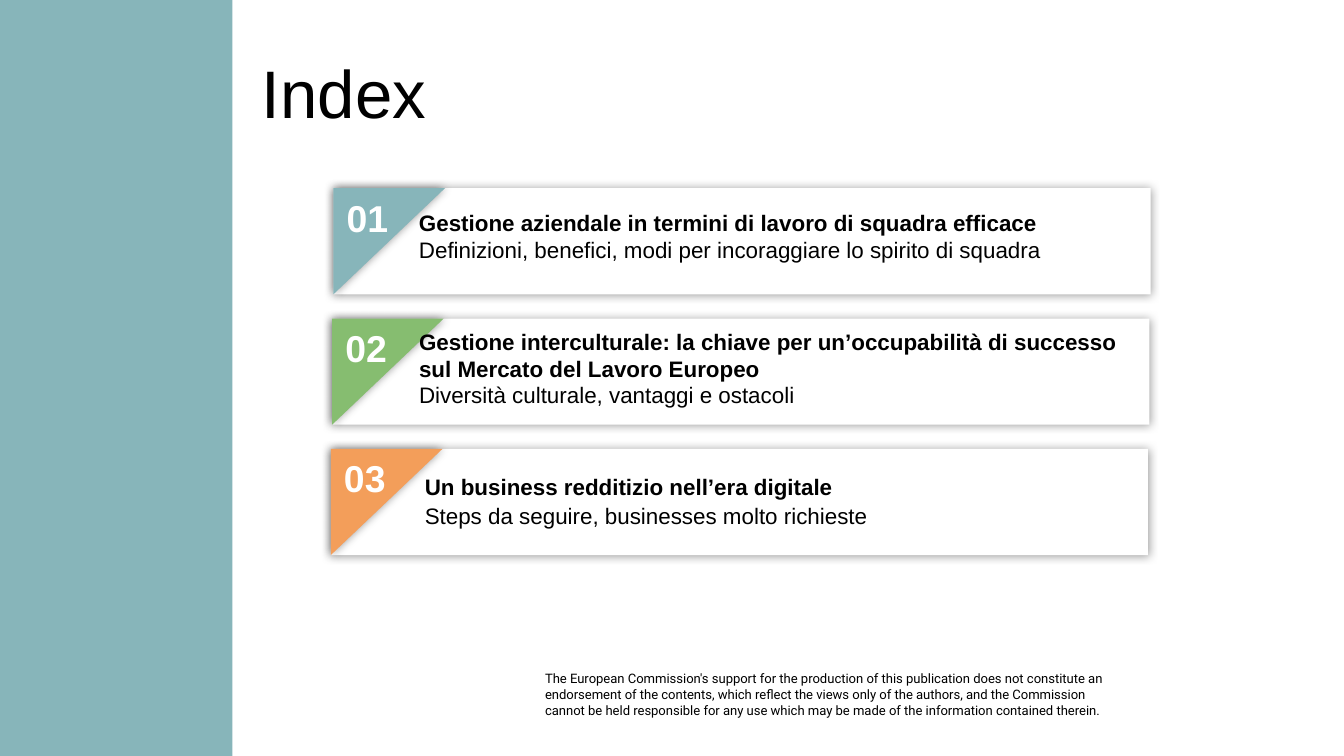
from dataclasses import dataclass

from lxml.etree import SubElement
from pptx import Presentation
from pptx.dml.color import RGBColor
from pptx.enum.shapes import MSO_SHAPE as Preset
from pptx.enum.text import MSO_ANCHOR as Anchor, MSO_AUTO_SIZE as AutoSize
from pptx.oxml.ns import qn
from pptx.util import Pt


@dataclass(frozen=True)
class Theme:
    teal: str = "87B5BA"
    green: str = "86BD70"
    orange: str = "F39E5A"
    white: str = "FFFFFF"
    black: str = "000000"
    font: str = "Arial"
    note_font: str = "Roboto"
    title_size: float = 36
    number_size: float = 20
    body_size: float = 12
    note_size: float = 7
    shadow_blur: float = 5
    shadow_opacity: int = 40


THEME = Theme()


@dataclass(frozen=True)
class Box:
    left: float
    top: float
    width: float
    height: float

    def lengths(self) -> tuple:
        return Pt(self.left), Pt(self.top), Pt(self.width), Pt(self.height)


@dataclass(frozen=True)
class Chapter:
    color: str
    heading: str
    summary: str
    text_box: Box
    line_spacing: float | None = None
    space_after: float | None = None


CHAPTERS = [
    Chapter(THEME.teal,
            "Gestione aziendale in termini di lavoro di squadra efficace",
            "Definizioni, benefici, modi per incoraggiare lo spirito di squadra",
            Box(217.4, 108.7, 399, 36)),
    Chapter(THEME.green,
            "Gestione interculturale: la chiave per un’occupabilità di successo "
            "sul Mercato del Lavoro Europeo",
            "Diversità culturale, vantaggi e ostacoli",
            Box(217.4, 172.1, 398, 59), space_after=8),
    Chapter(THEME.orange,
            "Un business redditizio nell’era digitale",
            "Steps da seguire, businesses molto richieste",
            Box(220.5, 249.1, 385, 45), line_spacing=1.07, space_after=8),
]
NOTE = [
    "The European Commission's support for the production of this publication "
    "does not constitute an endorsement of the contents, which reflect the views "
    "only of the authors, and the Commission",
    "cannot be held responsible for any use which may be made of the information "
    "contained therein.",
]

# Card grid: each row moves down one step and slightly to the left
FIRST_CARD = Box(178.6, 100.8, 437.8, 56.9)
ROW_STEP = 69.85
ROW_SHIFT = -0.7
CORNER_WIDTH = 59.8


def add_filled(shapes, preset: Preset, box: Box, color: str):
    shape = shapes.add_shape(preset, *box.lengths())
    shape.shadow.inherit = False
    shape.fill.solid()
    shape.fill.fore_color.rgb = RGBColor.from_string(color)
    shape.line.fill.background()
    return shape


def add_glow_shadow(shape) -> None:
    effects = shape._element.spPr.find(qn("a:effectLst"))
    shadow = SubElement(effects, qn("a:outerShdw"), blurRad=str(Pt(THEME.shadow_blur)),
                        dist="0", dir="0", algn="ctr", rotWithShape="0")
    color = SubElement(shadow, qn("a:srgbClr"), val=THEME.black)
    SubElement(color, qn("a:alpha"), val=str(THEME.shadow_opacity * 1000))


def add_text(slide, box: Box, paragraphs: list[str], size: float,
             color: str = THEME.black, font: str = THEME.font, bold: bool = False):
    frame = slide.shapes.add_textbox(*box.lengths()).text_frame
    frame.text = "\n".join(paragraphs)
    frame.word_wrap = True
    for paragraph in frame.paragraphs:
        for run in paragraph.runs:
            run.font.name = font
            run.font.size = Pt(size)
            run.font.bold = bold
            run.font.color.rgb = RGBColor.from_string(color)
    return frame


def add_card(slide, card: Box, color: str) -> None:
    group = slide.shapes.add_group_shape()
    add_glow_shadow(add_filled(group.shapes, Preset.RECTANGLE, card, THEME.white))
    # A quarter turn swaps the sides, so the box is offset to keep the corner in place
    offset = (CORNER_WIDTH - card.height) / 2
    corner_box = Box(card.left + offset, card.top - offset, card.height, CORNER_WIDTH)
    corner = add_filled(group.shapes, Preset.RIGHT_TRIANGLE, corner_box, color)
    corner.rotation = 90
    add_glow_shadow(corner)


def add_chapter_text(slide, chapter: Chapter) -> None:
    frame = add_text(slide, chapter.text_box, [f"{chapter.heading}\v{chapter.summary}"],
                     THEME.body_size)
    frame.auto_size = AutoSize.SHAPE_TO_FIT_TEXT
    paragraph = frame.paragraphs[0]
    paragraph.runs[0].font.bold = True
    if chapter.line_spacing:
        paragraph.line_spacing = chapter.line_spacing
    if chapter.space_after:
        paragraph.space_after = Pt(chapter.space_after)


def main() -> None:
    presentation = Presentation()
    presentation.slide_width, presentation.slide_height = Pt(720), Pt(405)
    slide = presentation.slides.add_slide(presentation.slide_layouts[6])

    # Disclaimer and side band
    note = add_text(slide, Box(292, 359.3, 300.5, 25.2), NOTE, THEME.note_size,
                    font=THEME.note_font)
    note.margin_left = note.margin_top = note.margin_right = note.margin_bottom = 0
    add_filled(slide.shapes, Preset.RECTANGLE, Box(0, 0, 124.5, 405), THEME.teal)

    # Title
    title = add_text(slide, Box(133.2, 26.6, 518.4, 45.4), ["Index"], THEME.title_size)
    title.vertical_anchor = Anchor.MIDDLE

    # Chapter cards
    for row, chapter in enumerate(CHAPTERS):
        card = Box(FIRST_CARD.left + row * ROW_SHIFT, FIRST_CARD.top + row * ROW_STEP,
                   FIRST_CARD.width, FIRST_CARD.height)
        add_card(slide, card, chapter.color)
        add_text(slide, Box(card.left, card.top, 41.8, 31.5), [f"{row + 1:02}"],
                 THEME.number_size, THEME.white, bold=True)
        add_chapter_text(slide, chapter)

    presentation.save("out.pptx")


if __name__ == "__main__":
    main()
